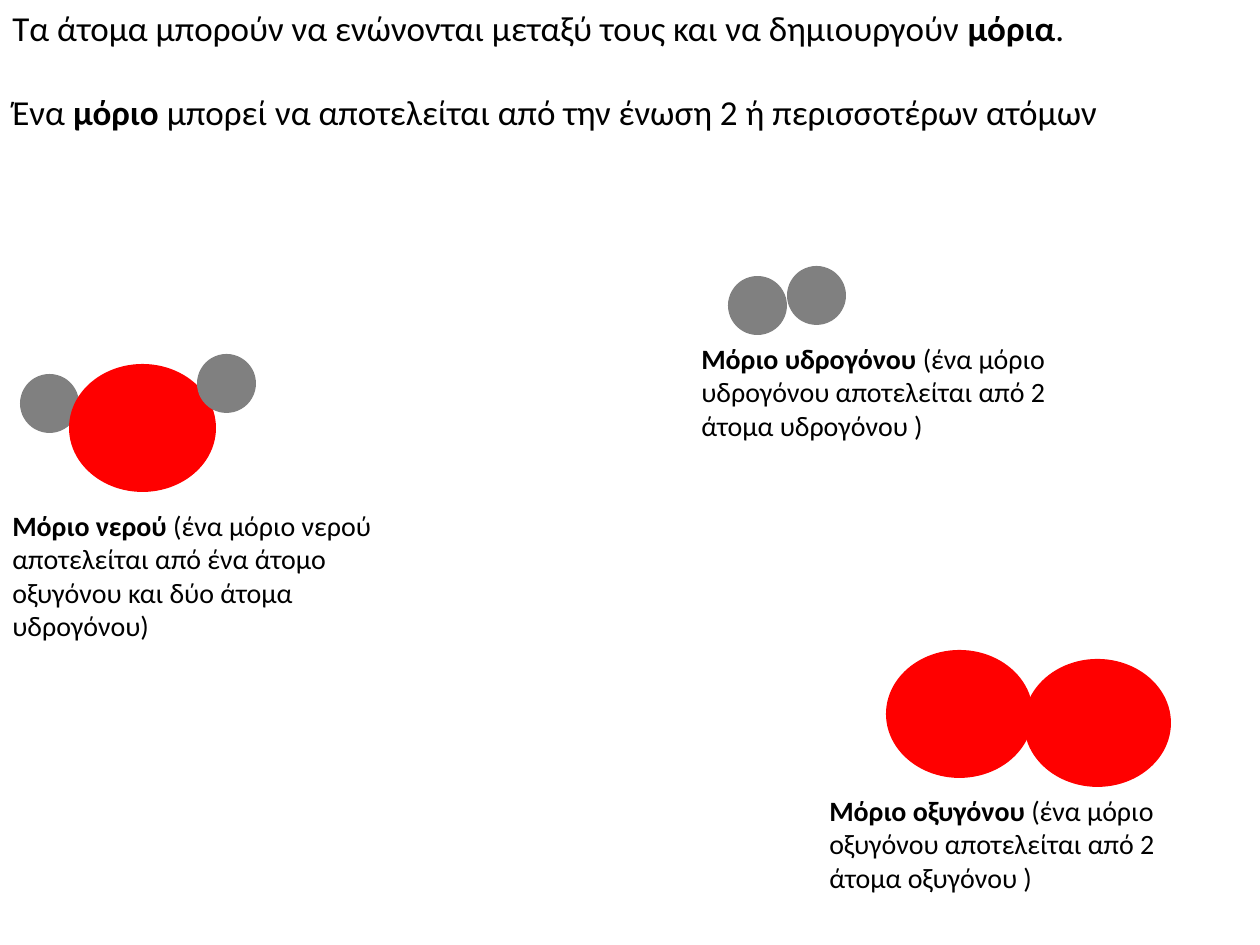
"""Build a slide on how atoms join into molecules."""
from pptx import Presentation
from pptx.dml.color import RGBColor
from pptx.enum.shapes import MSO_SHAPE as Shape
from pptx.enum.text import MSO_AUTO_SIZE as AutoSize
from pptx.util import Pt

PX = 914400 // 126
FONT = "Calibri"
BLACK = "000000"

ATOMS = {
    "hydrogen": {"size": (59, 59), "color": "808080"},
    "oxygen": {"size": (147, 128), "color": "FF0000"},
}
MOLECULES = [
    {
        "atoms": [("hydrogen", 20, 374), ("oxygen", 69, 364), ("hydrogen", 197, 354)],
        "box": (0, 502, 393, 149),
        "caption": [
            ("Μόριο νερού ", True),
            ("(ένα μόριο νερού αποτελείται από ένα άτομο οξυγόνου και δύο άτομα υδρογόνου)", False),
        ],
    },
    {
        "atoms": [("oxygen", 886, 650), ("oxygen", 1024, 659)],
        "box": (817, 787, 393, 115),
        "caption": [
            ("Μόριο οξυγόνου ", True),
            ("(ένα μόριο οξυγόνου αποτελείται από 2 άτομα οξυγόνου )", False),
        ],
    },
    {
        "atoms": [("hydrogen", 728, 276), ("hydrogen", 787, 266)],
        "box": (689, 335, 393, 115),
        "caption": [
            ("Μόριο υδρογόνου ", True),
            ("(ένα μόριο υδρογόνου αποτελείται από 2 άτομα υδρογόνου )", False),
        ],
    },
]
INTRO_BOX = (0, 0, 1211, 183)
INTRO = [
    [
        ("Τα άτομα μπορούν να ενώνονται μεταξύ τους και να δημιουργούν ", False),
        ("μόρια", True),
        (".", False),
    ],
    [
        ("Ένα ", False),
        ("μόριο", True),
        (" μπορεί να αποτελείται από την ένωση 2 ή περισσοτέρων ατόμων", False),
    ],
]


def rgb(color):
    """Turn a hex string into a colour."""
    return RGBColor.from_string(color)


def emu(*lengths):
    """Scale px lengths to EMU."""
    return [length * PX for length in lengths]


def add_text(slide, box, paragraphs, size, gap=0):
    """Add a wrapping text box of paragraphs made of (text, bold) runs."""
    frame = slide.shapes.add_textbox(*emu(*box)).text_frame
    frame.word_wrap = True
    frame.auto_size = AutoSize.SHAPE_TO_FIT_TEXT
    for index, runs in enumerate(paragraphs):
        paragraph = frame.add_paragraph() if index else frame.paragraphs[0]
        paragraph.space_before = Pt(gap if index else 0)
        for text, bold in runs:
            run = paragraph.add_run()
            run.text = text
            run.font.color.rgb = rgb(BLACK)
            for name, value in {"name": FONT, "size": Pt(size), "bold": bold}.items():
                setattr(run.font, name, value)


def add_atom(slide, kind, left, top):
    """Add one atom as a plain ellipse."""
    atom = ATOMS[kind]
    shape = slide.shapes.add_shape(Shape.OVAL, *emu(left, top, *atom["size"]))
    shape.shadow.inherit = False
    shape.fill.solid()
    shape.fill.fore_color.rgb = rgb(atom["color"])
    shape.line.fill.background()


def main():
    """Compose and save the slide."""
    presentation = Presentation()
    presentation.slide_width, presentation.slide_height = emu(1260, 945)
    slide = presentation.slides.add_slide(presentation.slide_layouts[6])
    add_text(slide, INTRO_BOX, INTRO, 20, gap=24)
    for molecule in MOLECULES:
        for atom in molecule["atoms"]:
            add_atom(slide, *atom)
        add_text(slide, molecule["box"], [molecule["caption"]], 16)
    presentation.save("out.pptx")


if __name__ == "__main__":
    main()
